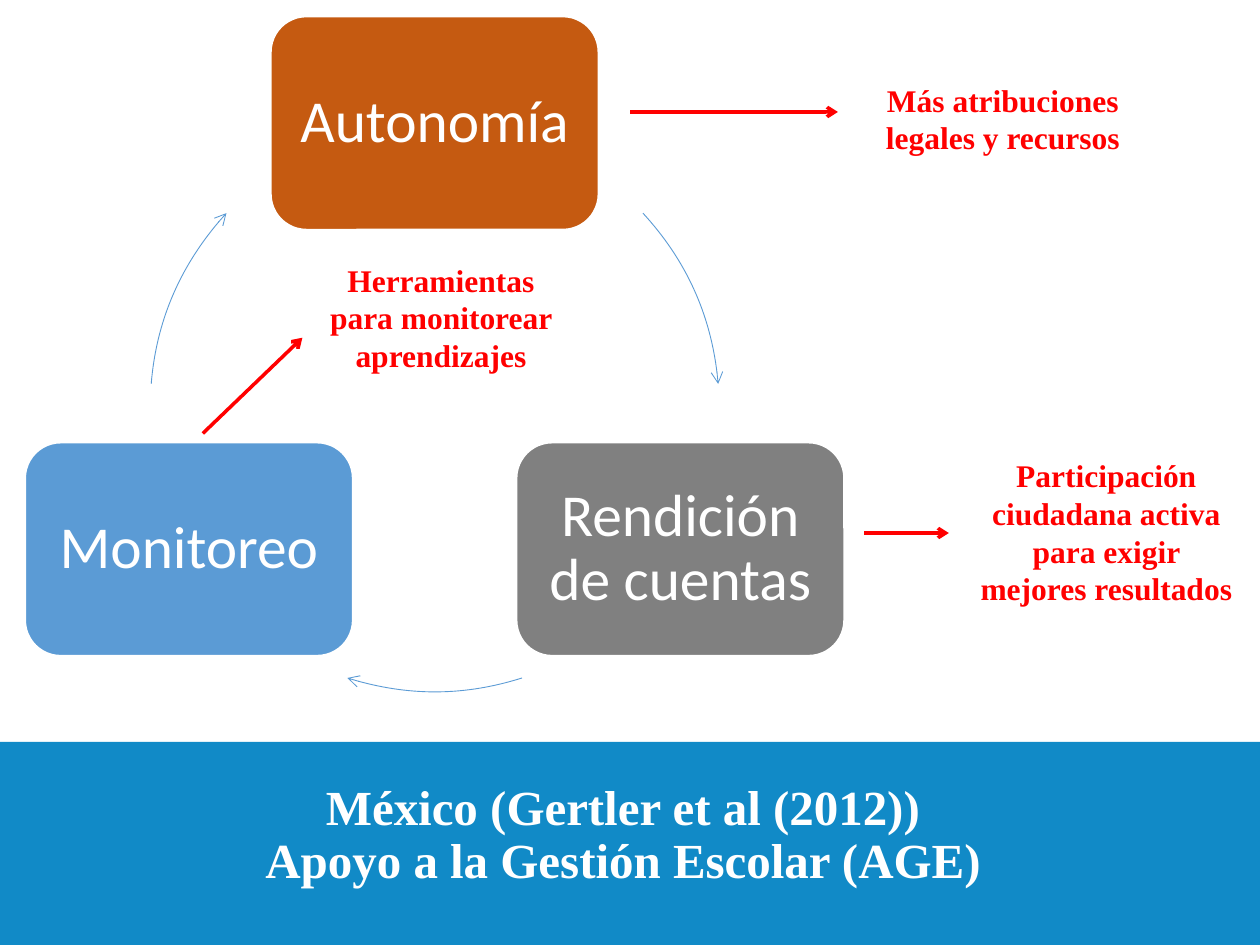
import pptx
import pptx.dml.color
import pptx.enum.shapes
import pptx.enum.text
import pptx.oxml
import pptx.oxml.ns
import pptx.util
from lxml import etree

Pt = pptx.util.Pt
qn = pptx.oxml.ns.qn
CENTER = pptx.enum.text.PP_ALIGN.CENTER
MIDDLE = pptx.enum.text.MSO_ANCHOR.MIDDLE
SHAPES = pptx.enum.shapes.MSO_SHAPE
COLORS = {
    "autonomy": "C55A11",
    "accountability": "808080",
    "monitoring": "5B9BD5",
    "cycle": "5B9BD5",
    "note": "FF0000",
    "band": "118AC7",
    "white": "FFFFFF",
}


def rgb(name):
    return pptx.dml.color.RGBColor.from_string(COLORS[name])


def style_arrow(arrow, color, width):
    """Set the line, its open arrowhead and an empty effect list."""
    arrow.line.color.rgb = rgb(color)
    arrow.line.width = Pt(width)
    etree.SubElement(arrow.line._get_or_add_ln(), qn("a:tailEnd"), type="arrow")
    properties = arrow.element.spPr
    if properties.find(qn("a:effectLst")) is None:
        etree.SubElement(properties, qn("a:effectLst"))


deck = pptx.Presentation()
deck.slide_width, deck.slide_height = Pt(720), Pt(540)
slide = deck.slides.add_slide(deck.slide_layouts[5])

# Cycle stages: the lower two sit evenly on both sides of the top one
CARD_W, CARD_H = 187.2, 121.8
CYCLE_X, CARD_OFFSET = 248.4, 140.4
stages = [
    ("Autonomía", "autonomy", CYCLE_X, 9.4),
    ("Rendición de cuentas", "accountability", CYCLE_X + CARD_OFFSET, 252.9),
    ("Monitoreo", "monitoring", CYCLE_X - CARD_OFFSET, 252.9),
]
for label, color, center_x, top in stages:
    stage = slide.shapes.add_shape(
        SHAPES.ROUNDED_RECTANGLE,
        Pt(center_x - CARD_W / 2), Pt(top), Pt(CARD_W), Pt(CARD_H))
    stage.shadow.inherit = False
    stage.fill.solid()
    stage.fill.fore_color.rgb = rgb(color)
    stage.line.color.rgb = rgb("white")
    stage.line.width = Pt(1)
    frame = stage.text_frame
    frame.word_wrap = True
    frame.vertical_anchor = MIDDLE
    frame.margin_left = frame.margin_right = Pt(10)
    frame.margin_top = frame.margin_bottom = Pt(10)
    paragraph = frame.paragraphs[0]
    paragraph.alignment = CENTER
    paragraph.line_spacing = 0.9
    run = paragraph.add_run()
    run.text = label
    run.font.name = "Calibri"
    run.font.size = Pt(34)
    run.font.color.rgb = rgb("white")

# Curved arrows: start, two control points, end
curves = [
    [(367.4, 121.8), (392.4, 149), (407.5, 183.6), (410.4, 219.4)],
    [(298.3, 387.4), (265.7, 397.7), (231.1, 397.7), (198.5, 387.4)],
    [(86.4, 219.4), (89.3, 183.6), (104.4, 149), (129.4, 121.8)],
]
for start, *bends in curves:
    builder = slide.shapes.build_freeform(Pt(start[0]), Pt(start[1]))
    builder.add_line_segments([(Pt(x), Pt(y)) for x, y in bends], close=False)
    curve = builder.convert_to_shape()
    curve.fill.background()
    curve.shadow.inherit = False
    segments = list(curve.element.iter(qn("a:lnTo")))
    bezier = etree.SubElement(segments[0].getparent(), qn("a:cubicBezTo"))
    for segment in segments:
        bezier.append(segment[0])
        segment.getparent().remove(segment)
    style_arrow(curve, "cycle", 0.5)

# Notes: text, left, top, height, arrow start, arrow end
notes = [
    ("Más atribuciones legales y recursos",
     493.9, 42.5, 51, (360, 64), (478.8, 64)),
    ("Participación ciudadana activa para exigir mejores resultados",
     553, 257, 94.3, (493.9, 304.6), (542.2, 304.6)),
    ("Herramientas para monitorear aprendizajes",
     172.8, 145.4, 72.7, (115.9, 247.7), (172.8, 193)),
]
for text, left, top, height, start, end in notes:
    arrow = slide.shapes.add_connector(
        pptx.enum.shapes.MSO_CONNECTOR.STRAIGHT,
        Pt(start[0]), Pt(start[1]), Pt(end[0]), Pt(end[1]))
    style_arrow(arrow, "note", 2)
    note = slide.shapes.add_textbox(Pt(left), Pt(top), Pt(158.4), Pt(height))
    note.text_frame.word_wrap = True
    paragraph = note.text_frame.paragraphs[0]
    paragraph.alignment = CENTER
    run = paragraph.add_run()
    run.text = text
    run.font.name = "Times New Roman"
    run.font.size = Pt(18)
    run.font.bold = True
    run.font.color.rgb = rgb("note")

# Title on its band
band = slide.shapes.add_shape(SHAPES.RECTANGLE, 0, Pt(424), Pt(720), Pt(116))
band.shadow.inherit = False
band.fill.solid()
band.fill.fore_color.rgb = rgb("band")
band.line.fill.background()

title = slide.shapes.title
title.left, title.top, title.width, title.height = Pt(23), Pt(433), Pt(666), Pt(90)
title.element.getparent().append(title.element)  # bring in front of the band
title.text_frame.vertical_anchor = MIDDLE
heading = title.text_frame.paragraphs[0]
heading.alignment = CENTER
heading.line_spacing = 0.9
for number, line in enumerate(
        ["México (Gertler et al (2012))", "Apoyo a la Gestión Escolar (AGE)"]):
    if number:
        heading.add_line_break()
    run = heading.add_run()
    run.text = line
    run.font.name = "Times New Roman"
    run.font.size = Pt(28)
    run.font.bold = True
    run.font.color.rgb = rgb("white")

deck.save("out.pptx")
